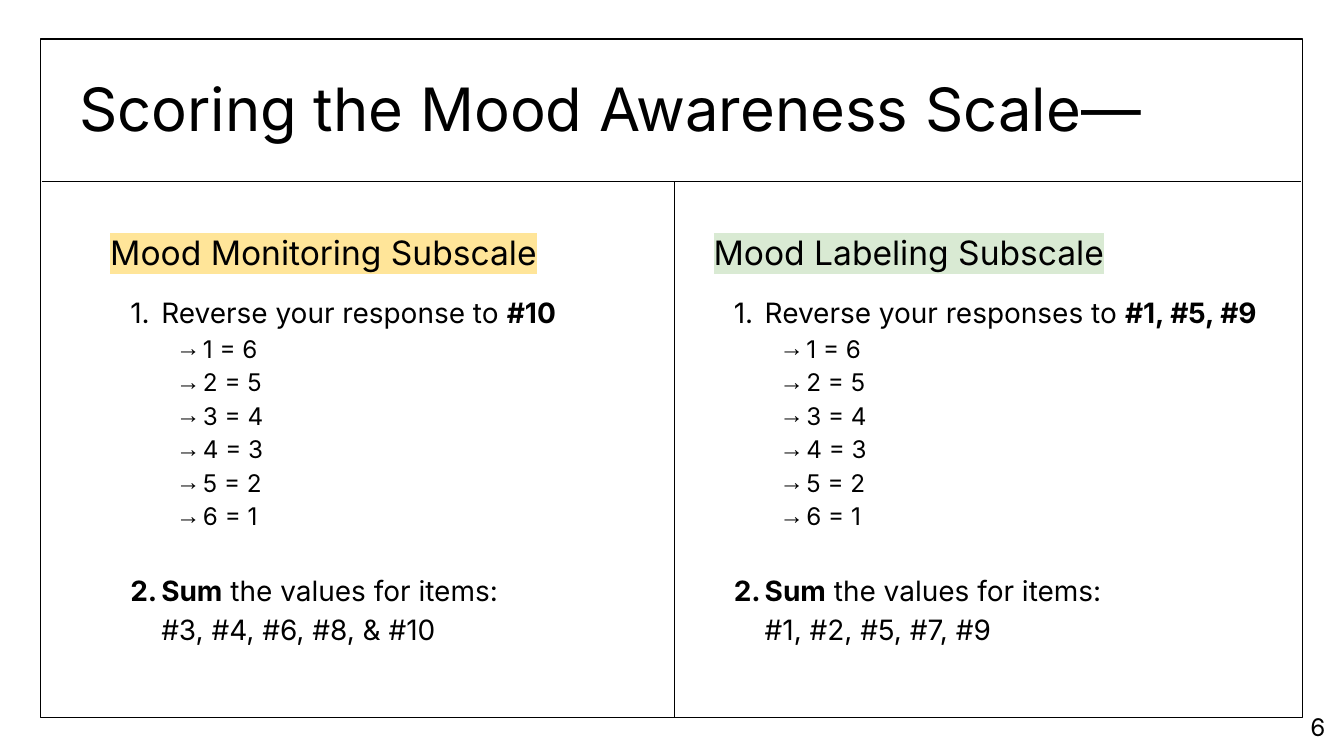
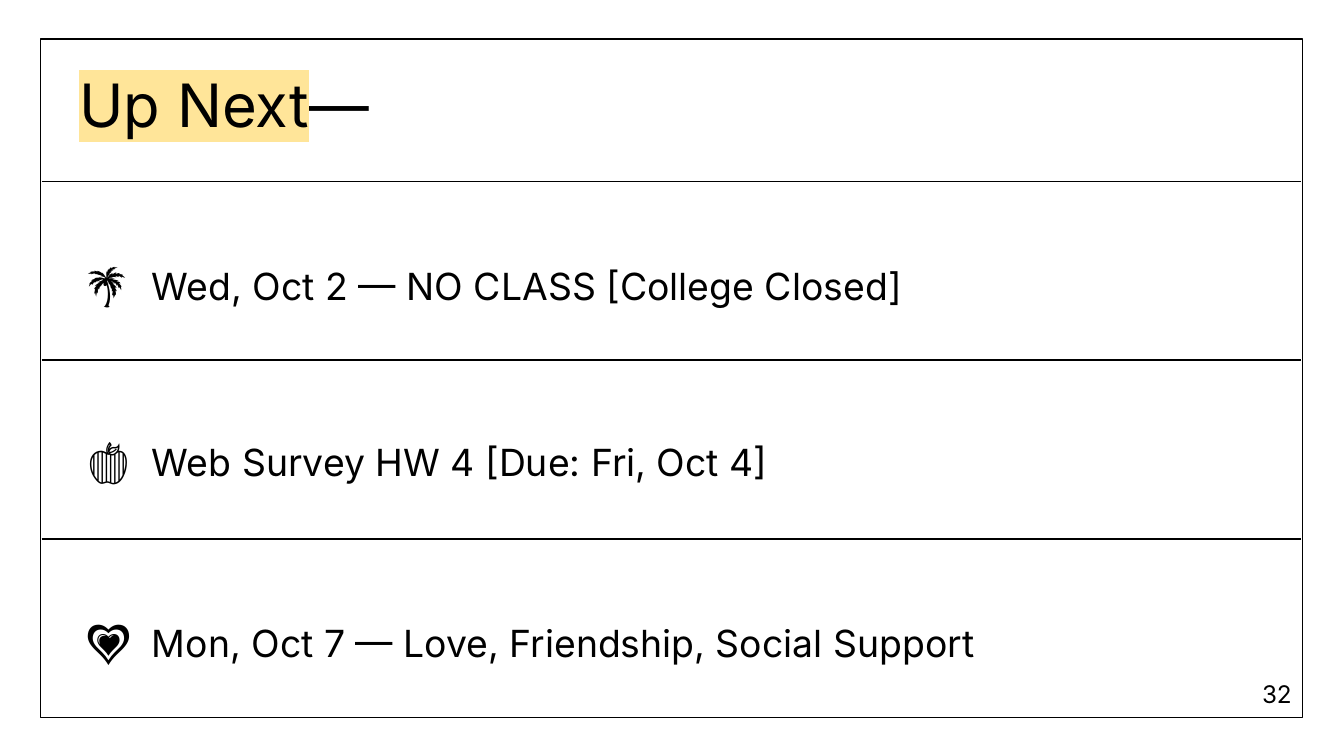
"""Build two framed class slides: mood scale scoring and upcoming dates."""
from lxml import etree
from pptx import Presentation
from pptx.dml.color import RGBColor
from pptx.enum.shapes import MSO_CONNECTOR, MSO_SHAPE
from pptx.enum.text import MSO_ANCHOR, MSO_AUTO_SIZE, PP_ALIGN
from pptx.oxml.ns import qn
from pptx.util import Inches, Pt

RECTANGLE, STRAIGHT = MSO_SHAPE.RECTANGLE, MSO_CONNECTOR.STRAIGHT
TOP, MIDDLE, BOTTOM = MSO_ANCHOR.TOP, MSO_ANCHOR.MIDDLE, MSO_ANCHOR.BOTTOM
LEFT, RIGHT = PP_ALIGN.LEFT, PP_ALIGN.RIGHT
NO_FIT = MSO_AUTO_SIZE.NONE

WIDTH = 10
HEIGHT = WIDTH * 9 / 16
FRAME_LEFT, FRAME_TOP = 0.03 * WIDTH, 0.29
FRAME_WIDTH, FRAME_HEIGHT = 9.39, 5.05
RULE_START, RULE_END = 0.31, 9.68
HEADER_END, ROW = 1.35, 1.33
DIVIDER = 5.02
INK, PAPER, YELLOW, GREEN = "000000", "FFFFFF", "FFE599", "D9EAD3"
FONT = "Inter"

HEADING = {"line_spacing": 1.15, "space_before": Pt(0)}
STEP = {"line_spacing": 1.15, "space_before": Pt(10)}
SECOND_STEP = {"line_spacing": 1.15, "space_before": Pt(20.5)}
REVERSAL = {"line_spacing": 1.15, "space_before": Pt(0), "level": 1}
EVENT = {"line_spacing": 1.15, "space_before": Pt(0), "space_after": Pt(6), "alignment": LEFT}
TITLE = {"line_spacing": 0.9, "space_before": Pt(0), "alignment": LEFT}
NUMBER = {"space_before": Pt(0), "alignment": RIGHT}


def colour(hex_value):
    """Turn a hex string into a colour."""
    return RGBColor.from_string(hex_value)


def write(box, area, anchor, inset, paragraphs):
    """Place a text box and fill it with formatted paragraphs."""
    box.left, box.top, box.width, box.height = (Inches(length) for length in area)
    text = box.text_frame
    across, down = (Inches(length) for length in inset)
    settings = {"word_wrap": True, "auto_size": NO_FIT, "vertical_anchor": anchor,
                "margin_left": across, "margin_right": across,
                "margin_top": down, "margin_bottom": down}
    for key, value in settings.items():
        setattr(text, key, value)
    for index, (style, indent, bullet, runs) in enumerate(paragraphs):
        paragraph = text.add_paragraph() if index else text.paragraphs[0]
        for key, value in style.items():
            setattr(paragraph, key, value)
        properties = paragraph._p.get_or_add_pPr()
        for key, value in zip(("marL", "indent"), indent):
            properties.set(key, str(Inches(value)))
        tag, attributes = bullet
        if tag != "a:buNone":
            ink = etree.SubElement(properties, qn("a:buClr"))
            etree.SubElement(ink, qn("a:srgbClr"), val=INK)
        if tag == "a:buAutoNum":
            etree.SubElement(properties, qn("a:buFont"), typeface=FONT)
        etree.SubElement(properties, qn(tag), **attributes)
        for words, size, bold, highlight in runs:
            if words == "\n":
                paragraph.add_line_break()
                etree.SubElement(paragraph._p[-1], qn("a:rPr"), sz=str(size * 100))
                continue
            run = paragraph.add_run()
            run.text = words
            for key, value in {"name": FONT, "size": Pt(size), "bold": bold}.items():
                setattr(run.font, key, value)
            run.font.color.rgb = colour(INK)
            if highlight:
                marker = etree.Element(qn("a:highlight"))
                etree.SubElement(marker, qn("a:srgbClr"), val=highlight)
                run.font._element.find(qn("a:solidFill")).addnext(marker)


PLAIN = ("a:buNone", {})
ARROW = ("a:buChar", {"char": "→"})
FLUSH, NUMBERED, NESTED, ICON = (0, 0), (0.38, -0.23), (0.69, -0.2), (0.49, -0.49)

deck = Presentation()
deck.slide_width, deck.slide_height = Inches(WIDTH), Inches(HEIGHT)
scoring = deck.slides.add_slide(deck.slide_layouts[3])
upcoming = deck.slides.add_slide(deck.slide_layouts[4])

header_rule = (RULE_START, HEADER_END, RULE_END, HEADER_END)
row_rules = [(RULE_START, HEADER_END + ROW * row, RULE_END, HEADER_END + ROW * row)
             for row in range(3)]
divider = (DIVIDER, HEADER_END, DIVIDER, FRAME_TOP + FRAME_HEIGHT)

pages = [
    (scoring, 0.56, [("Scoring the Mood Awareness Scale—", 32, False, None)],
     [header_rule, divider], "6", (9.36, 5.19)),
    (upcoming, 0.53, [("Up Next", 32, False, YELLOW), ("—", 32, False, None)],
     row_rules, "32", (9.11, 4.94)),
]
for slide, title_top, title_runs, rules, number, corner in pages:
    border = slide.shapes.add_shape(RECTANGLE, Inches(FRAME_LEFT), Inches(FRAME_TOP),
                                    Inches(FRAME_WIDTH), Inches(FRAME_HEIGHT))
    border.shadow.inherit = False
    border.fill.solid()
    border.fill.fore_color.rgb = colour(PAPER)
    border.line.color.rgb = colour(INK)
    border.line.width = Pt(0.75)
    border.element.getparent().insert(2, border.element)
    for ends in rules:
        rule = slide.shapes.add_connector(STRAIGHT, *(Inches(end) for end in ends))
        rule.line.color.rgb = colour(INK)
        rule.line.width = Pt(0.75)
        etree.SubElement(rule.element.spPr, qn("a:effectLst"))
    write(slide.shapes.title, (0.52, title_top, 0.9 * WIDTH, 0.55), MIDDLE, (0.07, 0.04),
          [(TITLE, FLUSH, PLAIN, title_runs)])
    write(slide.shapes.add_textbox(0, 0, 0, 0), (*corner, 0.6, 0.43), BOTTOM, (0.1, 0.1),
          [(NUMBER, FLUSH, PLAIN, [(number, 13, False, None)])])

subscales = [
    (0.72, 4.21, "Mood Monitoring Subscale", YELLOW,
     "Reverse your response to ", "#10", "#3, #4, #6, #8, & #10"),
    (5.21, 4.47, "Mood Labeling Subscale", GREEN,
     "Reverse your responses to ", "#1, #5, #9", "#1, #2, #5, #7, #9"),
]
for slot, subscale in enumerate(subscales, start=1):
    left, width, name, tint, reverse, reversed_items, summed_items = subscale
    steps = [(HEADING, FLUSH, PLAIN, [(name, 18, False, tint)]),
             (STEP, NUMBERED, ("a:buAutoNum", {"type": "arabicPeriod"}),
              [(reverse, 15, False, None), (reversed_items, 15, True, None)])]
    steps += [(REVERSAL, NESTED, ARROW, [(f"{score} = {7 - score}", 13, False, None)])
              for score in range(1, 7)]
    steps.append((SECOND_STEP, NUMBERED,
                  ("a:buAutoNum", {"type": "arabicPeriod", "startAt": "2"}),
                  [("Sum", 15, True, None), (" the values for items:", 15, False, None),
                   ("\n", 15, False, None), (summed_items, 15, False, None)]))
    write(scoring.placeholders[slot], (left, 1.58, width, 3.74), TOP, (0.1, 0.1), steps)

events = [(1.74, "🌴", "Wed, Oct 2 — NO CLASS [College Closed]"),
          (3.05, "🍎", "Web Survey HW 4 [Due: Fri, Oct 4]"),
          (4.4, "💗", "Mon, Oct 7 — Love, Friendship, Social Support")]
*event_slots, spare = list(upcoming.placeholders)[1:]
spare.element.getparent().remove(spare.element)
for slot, (top, icon, event) in zip(event_slots, events):
    write(slot, (0.54, top, 8.51, 0.55), TOP, (0.1, 0.1),
          [(EVENT, ICON, PLAIN, [(icon, 24, False, None), ("\t" + event, 20, False, None)])])

deck.save("out.pptx")
